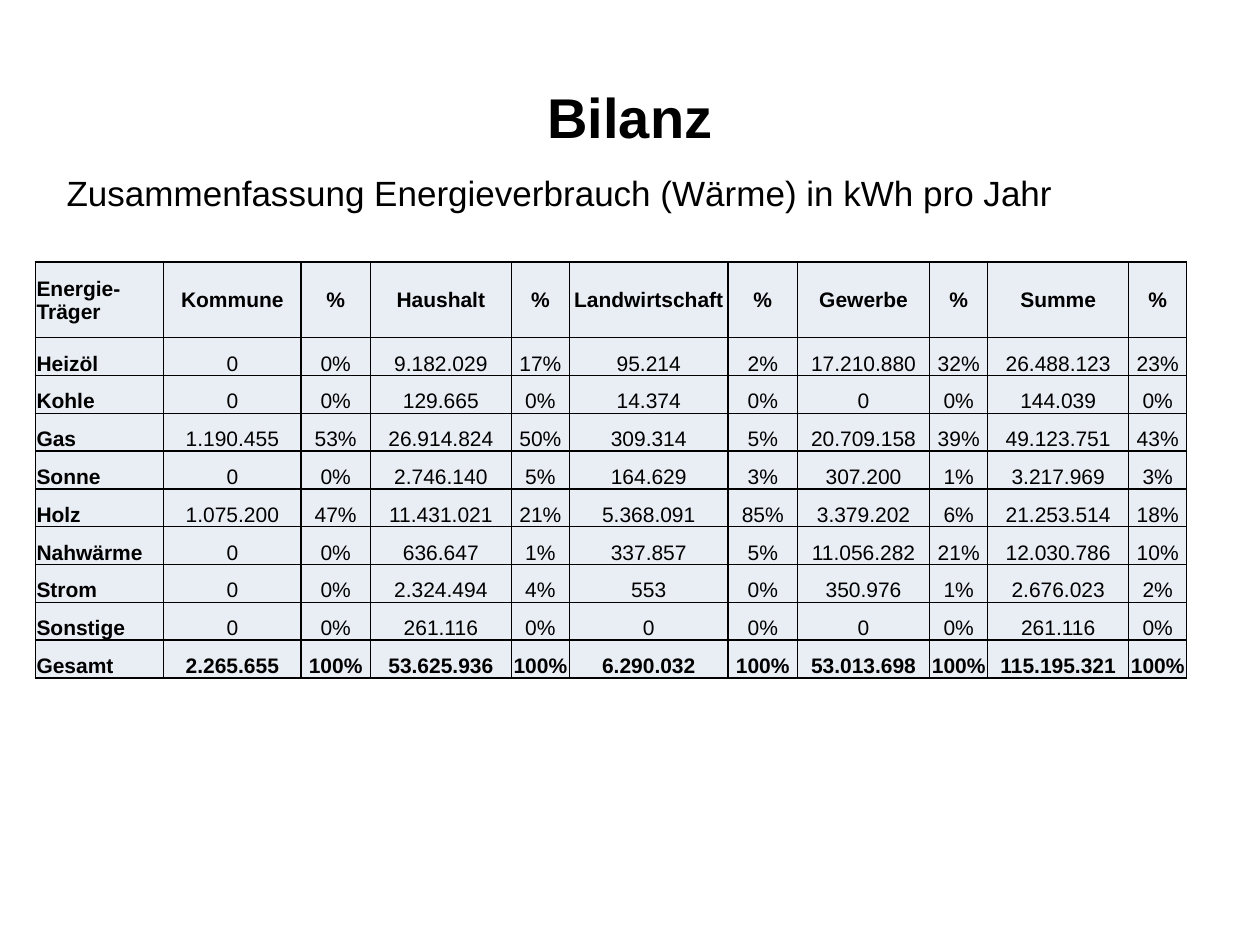
from lxml import etree
from pptx import Presentation
from pptx.dml.color import RGBColor
from pptx.enum.text import MSO_ANCHOR, PP_ALIGN
from pptx.oxml.ns import qn
from pptx.util import Inches, Pt

BLACK = RGBColor(0x00, 0x00, 0x00)
PALE_BLUE = RGBColor(0xE9, 0xED, 0xF4)
LEFT, CENTER = PP_ALIGN.LEFT, PP_ALIGN.CENTER
TOP, MIDDLE, BOTTOM = MSO_ANCHOR.TOP, MSO_ANCHOR.MIDDLE, MSO_ANCHOR.BOTTOM

COLUMN_WIDTHS = [1.02, 1.09, 0.55, 1.12, 0.46, 1.26, 0.55, 1.05, 0.46, 1.12, 0.46]
HEADER_HEIGHT, ROW_HEIGHT = 0.6, 0.3
CELL_INSET = 0.01
HEADERS = ["Energie-Träger", "Kommune", "%", "Haushalt", "%", "Landwirtschaft", "%",
           "Gewerbe", "%", "Summe", "%"]
ENERGY_ROWS = """
Heizöl 0 0% 9.182.029 17% 95.214 2% 17.210.880 32% 26.488.123 23%
Kohle 0 0% 129.665 0% 14.374 0% 0 0% 144.039 0%
Gas 1.190.455 53% 26.914.824 50% 309.314 5% 20.709.158 39% 49.123.751 43%
Sonne 0 0% 2.746.140 5% 164.629 3% 307.200 1% 3.217.969 3%
Holz 1.075.200 47% 11.431.021 21% 5.368.091 85% 3.379.202 6% 21.253.514 18%
Nahwärme 0 0% 636.647 1% 337.857 5% 11.056.282 21% 12.030.786 10%
Strom 0 0% 2.324.494 4% 553 0% 350.976 1% 2.676.023 2%
Sonstige 0 0% 261.116 0% 0 0% 0 0% 261.116 0%
Gesamt 2.265.655 100% 53.625.936 100% 6.290.032 100% 53.013.698 100% 115.195.321 100%
"""


def write_text(text_frame, text, size=12, bold=False, align=LEFT):
    text_frame.word_wrap = True
    paragraph = text_frame.paragraphs[0]
    paragraph.alignment = align
    run = paragraph.add_run()
    run.text = text
    run.font.name = "Arial"
    run.font.size = Pt(size)
    run.font.bold = bold
    run.font.color.rgb = BLACK


def add_heading(slide, box, text, anchor=TOP, **text_format):
    heading = slide.shapes.add_textbox(*map(Inches, box))
    heading.text_frame.vertical_anchor = anchor
    write_text(heading.text_frame, text, **text_format)


def format_cell(cell, anchor):
    """Set the inset, anchor, fill and the four borders of a cell."""
    cell.margin_left = cell.margin_top = cell.margin_right = Inches(CELL_INSET)
    cell.margin_bottom = 0
    cell.vertical_anchor = anchor
    properties = cell._tc.get_or_add_tcPr()
    for side in ("a:lnL", "a:lnR", "a:lnT", "a:lnB"):
        border = etree.SubElement(properties, qn(side), w=str(Pt(1)))
        border_fill = etree.SubElement(border, qn("a:solidFill"))
        etree.SubElement(border_fill, qn("a:srgbClr"), val=str(BLACK))
    cell.fill.solid()
    cell.fill.fore_color.rgb = PALE_BLUE


def add_balance_table(slide, left, top):
    rows = [HEADERS] + [line.split() for line in ENERGY_ROWS.strip().splitlines()]
    heights = [HEADER_HEIGHT] + [ROW_HEIGHT] * (len(rows) - 1)
    table = slide.shapes.add_table(
        len(rows), len(HEADERS), Inches(left), Inches(top),
        Inches(sum(COLUMN_WIDTHS)), Inches(sum(heights))).table
    table.first_row = table.horz_banding = False
    for column, width in zip(table.columns, COLUMN_WIDTHS):
        column.width = Inches(width)
    for row, height in zip(table.rows, heights):
        row.height = Inches(height)

    total_row = len(rows) - 1
    for r, values in enumerate(rows):
        for c, value in enumerate(values):
            cell = table.cell(r, c)
            format_cell(cell, MIDDLE if r == 0 else BOTTOM)
            write_text(cell.text_frame, value, bold=c == 0 or r in (0, total_row),
                       align=LEFT if c == 0 else CENTER)


def main():
    presentation = Presentation()
    presentation.slide_width, presentation.slide_height = Inches(10), Inches(7.5)
    slide = presentation.slides.add_slide(presentation.slide_layouts[6])
    add_heading(slide, (0.5, 0.3, 9, 1.25), "Bilanz", anchor=MIDDLE,
                size=32, bold=True, align=CENTER)
    add_heading(slide, (0.43, 1.31, 9.29, 0.44),
                "Zusammenfassung Energieverbrauch (Wärme) in kWh pro Jahr", size=20)
    add_balance_table(slide, 0.28, 2.08)
    presentation.save("out.pptx")


if __name__ == "__main__":
    main()
